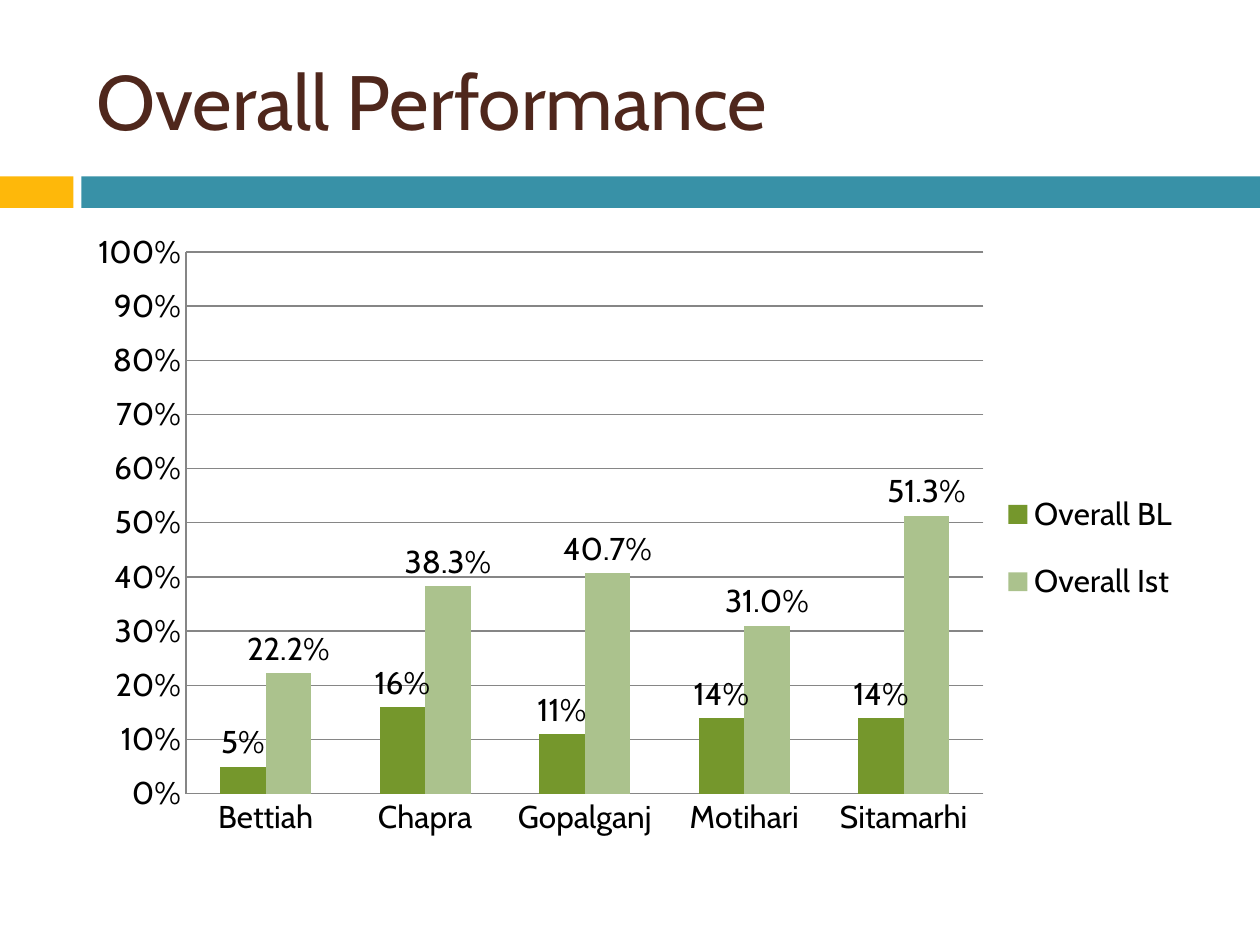
"""Build the Overall Performance slide with its clustered column chart."""
from dataclasses import dataclass

import lxml.etree
import pptx
import pptx.chart.data
import pptx.dml.color
import pptx.enum.chart
import pptx.enum.shapes
import pptx.enum.text
import pptx.oxml.ns
import pptx.util

Pt = pptx.util.Pt
FONT = "Cabin"
GRID = "868686"


@dataclass(frozen=True)
class Frame:
    left: float
    top: float
    width: float
    height: float

    def lengths(self) -> tuple:
        return Pt(self.left), Pt(self.top), Pt(self.width), Pt(self.height)


@dataclass(frozen=True)
class Band:
    frame: Frame
    color: str


@dataclass(frozen=True)
class Measure:
    name: str
    values: tuple[float, ...]
    color: str
    label_format: str


DISTRICTS = ("Bettiah", "Chapra", "Gopalganj", "Motihari", "Sitamarhi")
BANDS = (
    Band(Frame(0, 100.8, 42, 18), "FEB80A"),
    Band(Frame(46.5, 100.8, 673.5, 18), "3891A7"),
)
MEASURES = (
    Measure("Overall BL", (0.05, 0.16, 0.11, 0.14, 0.14), "75972C", "0%"),
    Measure("Overall Ist", (0.222, 0.383, 0.407, 0.31, 0.513), "ABC28D", "0.0%"),
)


def paint(target, color: str) -> None:
    if hasattr(target, "solid"):
        target.solid()
        target = target.fore_color
    target.rgb = pptx.dml.color.RGBColor.from_string(color)


def style_font(font, size: float, color: str) -> None:
    font.name = FONT
    font.size = Pt(size)
    paint(font.color, color)


def draw_band(page, band: Band) -> None:
    shape = page.shapes.add_shape(
        pptx.enum.shapes.MSO_SHAPE.RECTANGLE, *band.frame.lengths()
    )
    shape.shadow.inherit = False
    paint(shape.fill, band.color)
    shape.line.fill.background()


def draw_title(page, text: str, frame: Frame) -> None:
    box = page.shapes.add_textbox(*frame.lengths())
    box.text_frame.word_wrap = True
    box.text_frame.vertical_anchor = pptx.enum.text.MSO_ANCHOR.MIDDLE
    box.text_frame.text = text
    for span in box.text_frame.paragraphs[0].runs:
        style_font(span.font, 44, "4F271C")


def place_part(part, index: int, settings: dict[str, str | float]) -> None:
    qualify = pptx.oxml.ns.qn
    for old in part.findall(qualify("c:layout")):
        part.remove(old)
    layout = lxml.etree.Element(qualify("c:layout"))
    manual = lxml.etree.SubElement(layout, qualify("c:manualLayout"))
    for tag, value in settings.items():
        lxml.etree.SubElement(manual, qualify(f"c:{tag}")).set("val", str(value))
    part.insert(index, layout)


def style_axis(axis) -> None:
    axis.major_tick_mark = pptx.enum.chart.XL_TICK_MARK.NONE
    axis.minor_tick_mark = pptx.enum.chart.XL_TICK_MARK.NONE
    axis.format.line.width = Pt(0.75)
    paint(axis.format.line.fill, GRID)


def style_series(series, measure: Measure) -> None:
    paint(series.format.fill, measure.color)
    series.invert_if_negative = False
    labels = series.data_labels
    labels.show_value = True
    labels.number_format = measure.label_format
    labels.number_format_is_linked = False
    labels.position = pptx.enum.chart.XL_LABEL_POSITION.OUTSIDE_END
    style_font(labels.font, 18, "000000")


def draw_chart(page, frame: Frame) -> None:
    data = pptx.chart.data.CategoryChartData()
    data.categories = DISTRICTS
    for measure in MEASURES:
        data.add_series(measure.name, measure.values)
    chart = page.shapes.add_chart(
        pptx.enum.chart.XL_CHART_TYPE.COLUMN_CLUSTERED, *frame.lengths(), data
    ).chart
    chart.has_title = False
    style_font(chart.font, 18, "000000")
    chart.plots[0].gap_width = 150
    chart.plots[0].overlap = 0
    chart.plots[0].vary_by_categories = False
    for series, measure in zip(chart.plots[0].series, MEASURES):
        style_series(series, measure)

    style_axis(chart.category_axis)
    axis = chart.value_axis
    style_axis(axis)
    axis.minimum_scale, axis.maximum_scale, axis.major_unit = 0, 1, 0.1
    axis.tick_labels.number_format = "0%"
    axis.tick_labels.number_format_is_linked = False
    axis.has_major_gridlines = True
    axis.major_gridlines.format.line.width = Pt(0.75)
    paint(axis.major_gridlines.format.line.fill, GRID)

    chart.has_legend = True
    chart.legend.position = pptx.enum.chart.XL_LEGEND_POSITION.RIGHT
    chart.legend.include_in_layout = False
    style_font(chart.legend.font, 18, "000000")

    edges = {"xMode": "edge", "yMode": "edge"}
    plot_area = chart.element.find(".//" + pptx.oxml.ns.qn("c:plotArea"))
    legend = chart.element.find(".//" + pptx.oxml.ns.qn("c:legend"))
    place_part(plot_area, 0, {"layoutTarget": "inner", **edges,
                              "x": 0.1, "y": 0.05, "w": 0.71, "h": 0.86})
    place_part(legend, 1, {**edges, "x": 0.82, "y": 0.39, "w": 0.17, "h": 0.26})


def main() -> None:
    deck = pptx.Presentation()
    deck.slide_width, deck.slide_height = Pt(720), Pt(540)
    page = deck.slides.add_slide(deck.slide_layouts[6])
    paint(page.background.fill, "FFFFFF")
    for band in BANDS:
        draw_band(page, band)
    draw_title(page, "Overall Performance", Frame(48, 18, 642, 78))
    draw_chart(page, Frame(42, 126, 642, 360))
    deck.save("out.pptx")


if __name__ == "__main__":
    main()
